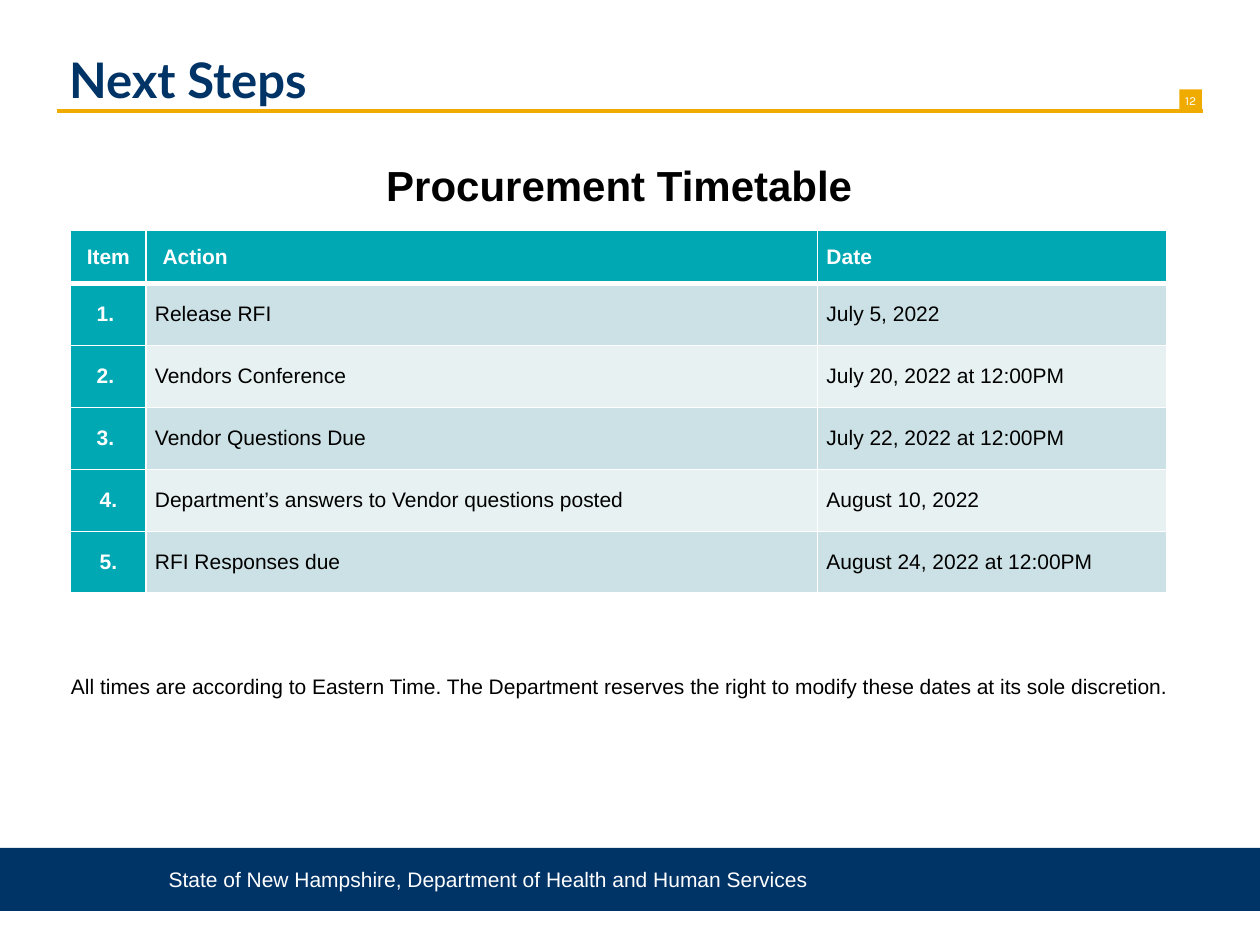
from lxml.etree import SubElement
from pptx import Presentation
from pptx.dml.color import RGBColor
from pptx.enum.shapes import MSO_CONNECTOR, MSO_SHAPE
from pptx.enum.text import MSO_ANCHOR, PP_ALIGN
from pptx.oxml.ns import qn
from pptx.util import Inches, Pt

COLUMNS, ROWS = 100, 75
UNIT = Inches(10) / COLUMNS

NAVY, GOLD, TEAL = "003366", "F0AB00", "00A8B4"
WHITE, BLACK = "FFFFFF", "000000"
BANDS = ("CCE1E5", "E7F1F2")

COLUMN_WIDTHS = (6, 53.3, 27.7)
HEADER_HEIGHT, ROW_HEIGHT = 4.2, 4.92
TIMETABLE = (
    ("Item", "Action", "Date"),
    ("1. ", "Release RFI", "July 5, 2022"),
    ("2. ", "Vendors Conference", "July 20, 2022 at 12:00PM"),
    ("3. ", "Vendor Questions Due", "July 22, 2022 at 12:00PM"),
    ("4.", "Department’s answers to Vendor questions posted", "August 10, 2022"),
    ("5.", "RFI Responses due", "August 24, 2022 at 12:00PM"),
)


def grid(*lengths):
    """Turn counts of grid columns or rows into slide lengths."""
    return [round(length * UNIT) for length in lengths]


def color(hex_code):
    return RGBColor.from_string(hex_code)


def write(frame, text, size, hex_code, font="Arial", bold=False, align=PP_ALIGN.LEFT):
    para = frame.paragraphs[0]
    para.alignment = align
    span = para.add_run()
    span.text = text
    span.font.name = font
    span.font.size = Pt(size)
    span.font.bold = bold
    span.font.color.rgb = color(hex_code)


def add_text(page, place, text, size, hex_code, **style):
    box = page.shapes.add_textbox(*grid(*place))
    box.text_frame.word_wrap = True
    write(box.text_frame, text, size, hex_code, **style)


def add_block(page, place, hex_code):
    block = page.shapes.add_shape(MSO_SHAPE.RECTANGLE, *grid(*place))
    block.shadow.inherit = False
    block.fill.solid()
    block.fill.fore_color.rgb = color(hex_code)
    block.line.fill.background()
    return block


def add_rule(page, ends, hex_code, width):
    rule = page.shapes.add_connector(MSO_CONNECTOR.STRAIGHT, *grid(*ends))
    rule.line.color.rgb = color(hex_code)
    rule.line.width = Pt(width)
    SubElement(rule._element.spPr, qn("a:effectLst"))


def add_page_number(page, number):
    badge = add_block(page, (93.6, 7.1, 1.8, 1.8), GOLD)
    frame = badge.text_frame
    frame.margin_left = frame.margin_right = frame.margin_top = frame.margin_bottom = 0
    frame.word_wrap = False
    frame.vertical_anchor = MSO_ANCHOR.MIDDLE
    write(frame, number, 7, WHITE, font="Karla", align=PP_ALIGN.CENTER)


def set_borders(cell, **widths):
    """Draw white cell borders; keys are the sides L, R, T and B in that order."""
    properties = cell._tc.get_or_add_tcPr()
    for side, width in widths.items():
        line = SubElement(properties, qn(f"a:ln{side}"), w=str(Pt(width)))
        fill = SubElement(line, qn("a:solidFill"))
        SubElement(fill, qn("a:srgbClr"), val=WHITE)


def fill_cell(cell, text, row, column):
    heading = row == 0 or column == 0
    set_borders(cell, L=1, R=1, T=3 if row == 1 else 1, B=3 if row == 0 else 1)
    cell.fill.solid()
    cell.fill.fore_color.rgb = color(TEAL if heading else BANDS[(row - 1) % 2])
    cell.vertical_anchor = MSO_ANCHOR.MIDDLE
    cell.margin_left = cell.margin_right = Inches(0.07)
    cell.margin_top = cell.margin_bottom = 0
    if text == "Action":
        cell.margin_left = Inches(0.13)
    if column == 0:
        align = PP_ALIGN.CENTER
    else:
        align = PP_ALIGN.LEFT if row == 0 else PP_ALIGN.JUSTIFY
    write(cell.text_frame, text, 12, WHITE if heading else BLACK, bold=heading, align=align)


def add_timetable(page, left, top):
    heights = [HEADER_HEIGHT] + [ROW_HEIGHT] * (len(TIMETABLE) - 1)
    place = grid(left, top, sum(COLUMN_WIDTHS), sum(heights))
    table = page.shapes.add_table(len(heights), len(COLUMN_WIDTHS), *place).table
    for column, width in zip(table.columns, grid(*COLUMN_WIDTHS)):
        column.width = width
    for row, height in zip(table.rows, grid(*heights)):
        row.height = height
    for row, texts in enumerate(TIMETABLE):
        for column, text in enumerate(texts):
            fill_cell(table.cell(row, column), text, row, column)


def main():
    deck = Presentation()
    deck.slide_width, deck.slide_height = grid(COLUMNS, ROWS)
    page = deck.slides.add_slide(deck.slide_layouts[6])

    add_page_number(page, "12")
    add_rule(page, (4.5, 8.8, 95.5, 8.8), GOLD, 2)
    add_block(page, (0, 67.3, COLUMNS, 5), NAVY)
    add_text(page, (12.4, 68.3, 75.1, 3),
             "State of New Hampshire, Department of Health and Human Services", 12, WHITE)

    add_text(page, (4.5, 3.4, 87.1, 5.7), "Next Steps", 28, NAVY, font="Lato", bold=True)
    add_timetable(page, 5.6, 18.3)
    add_text(page, (3.3, 12.2, 91.7, 5), "Procurement Timetable", 24, BLACK,
             bold=True, align=PP_ALIGN.CENTER)
    add_text(page, (4.4, 53, 89.6, 3),
             "All times are according to Eastern Time. The Department reserves "
             "the right to modify these dates at its sole discretion.",
             12, BLACK, align=PP_ALIGN.CENTER)
    deck.save("out.pptx")


if __name__ == "__main__":
    main()
